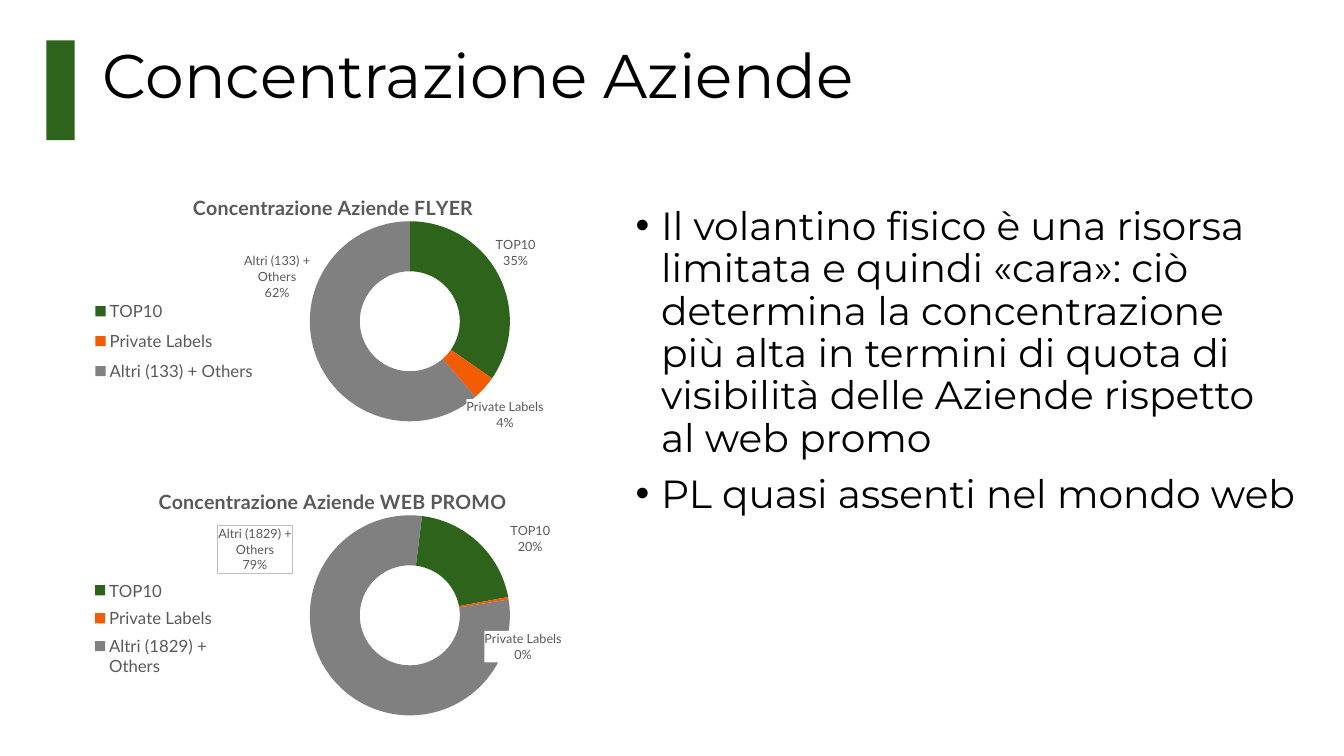
import pptx
import pptx.chart.data
import pptx.dml.color
import pptx.enum.chart
import pptx.enum.shapes
import pptx.oxml
import pptx.oxml.ns
import pptx.util

Cm, Pt = pptx.util.Cm, pptx.util.Pt
qn = pptx.oxml.ns.qn
COLORS = {"green": "2E631B", "orange": "F25C05", "grey": "808080", "text": "000000",
          "label": "595959", "border": "BFBFBF", "white": "FFFFFF"}
NS = pptx.oxml.ns.nsdecls("c", "a")
BULLETS = ["Il volantino fisico è una risorsa limitata e quindi «cara»: ciò determina la "
           "concentrazione più alta in termini di quota di visibilità delle Aziende rispetto "
           "al web promo",
           "PL quasi assenti nel mondo web"]
CHARTS = [
    dict(box=(2.03, 4.5, 12.7, 6.88), title="Concentrazione Aziende FLYER", title_x=21.6,
         cats=["TOP10", "Private Labels", "Altri (133) + Others"], vals=[35, 4, 62],
         offsets=[(7.8, -12.4), (7.8, 16), (-12.4, -26)],
         legend=(0.6, 41.3, 36, 36.5)),
    dict(box=(2.03, 11.91, 12.7, 6.88), title="Concentrazione Aziende WEB PROMO", title_x=14.8,
         cats=["TOP10", "Private Labels", "Altri (1829) + Others"], vals=[20, 0.4, 79],
         offsets=[(13.7, -8), (7.8, 16.2), (-20.4, -44)],
         legend=(1, 36.5, 27, 41), start=7, framed=2),
]


def rgb(name):
    """Return the named colour."""
    return pptx.dml.color.RGBColor.from_string(COLORS[name])


def set_font(font, size, color="label", name="Lato", bold=False):
    """Set the look of a font."""
    font.size, font.name, font.bold = Pt(size), name, bold
    font.color.rgb = rgb(color)


def add_text(tf, text, first=True, bullet=False, spacing=None, before=0, **font):
    """Write one paragraph into a text frame."""
    p = tf.paragraphs[0] if first else tf.add_paragraph()
    if bullet:
        pPr = p._p.get_or_add_pPr()
        pPr.set("marL", str(Cm(0.64)))
        pPr.set("indent", str(-Cm(0.64)))
        pPr.append(pptx.oxml.parse_xml(f'<a:buFont {NS} typeface="Arial"/>'))
        pPr.append(pptx.oxml.parse_xml(f'<a:buChar {NS} char="•"/>'))
    if spacing:
        p.line_spacing = spacing
        p.space_before = Pt(before)
    r = p.add_run()
    r.text = text
    set_font(r.font, **font)


def add_box(slide, box):
    """Add a wrapping text box and return its text frame."""
    tf = slide.shapes.add_textbox(*map(Cm, box)).text_frame
    tf.word_wrap = True
    return tf


def add_heading(slide, box, text):
    """Draw the green bar and the slide title."""
    x, y, w, h = box
    sp = slide.shapes.add_shape(pptx.enum.shapes.MSO_SHAPE.RECTANGLE,
                                Cm(x), Cm(y), Cm(0.71), Cm(2.51))
    sp.shadow.inherit = False
    sp.fill.solid()
    sp.fill.fore_color.rgb = rgb("green")
    sp.line.fill.background()
    tf = add_box(slide, (x + 1.17, y, w - 1.17, h))
    add_text(tf, text, spacing=0.9, size=44, color="text", name="Montserrat")


def add_bullets(slide, box, lines):
    """Draw the bulleted comments."""
    tf = add_box(slide, box)
    for i, line in enumerate(lines):
        add_text(tf, line, first=i == 0, bullet=True, spacing=0.9, before=10 if i else 0,
                 size=28, color="text", name="Montserrat")


def layout_xml(x, y, w=None, h=None, edge=True, inner=False):
    """Return a manual layout element from percentages of the chart."""
    parts = '<c:layoutTarget val="inner"/>' if inner else ""
    if edge:
        parts += '<c:xMode val="edge"/><c:yMode val="edge"/>'
    for tag, value in zip("xywh", (x, y, w, h)):
        if value is not None:
            parts += f'<c:{tag} val="{value / 100:.3f}"/>'
    return f"<c:layout {NS}><c:manualLayout>{parts}</c:manualLayout></c:layout>"


def set_layout(parent, xml, after=None):
    """Replace the layout of a chart part."""
    for old in parent.findall(qn("c:layout")):
        parent.remove(old)
    index = 0 if after is None else parent.index(parent.find(qn(after))) + 1
    parent.insert(index, pptx.oxml.parse_xml(xml))


def labels_xml(offsets, framed):
    """Return data labels that are moved from their slices."""
    show = "".join(f'<c:{tag} val="{val}"/>' for tag, val in [
        ("showLegendKey", 0), ("showVal", 1), ("showCatName", 1),
        ("showSerName", 0), ("showPercent", 0), ("showBubbleSize", 0)])
    show += "<c:separator>\n</c:separator>"
    text = ('<c:txPr><a:bodyPr wrap="square"/><a:p><a:pPr><a:defRPr sz="900" b="0"><a:solidFill>'
            f'<a:srgbClr val="{COLORS["label"]}"/></a:solidFill><a:latin typeface="Lato"/>'
            '</a:defRPr></a:pPr><a:endParaRPr lang="it-IT"/></a:p></c:txPr>')
    number = '<c:numFmt formatCode="0&quot;%&quot;" sourceLinked="0"/>'
    fill = f'<a:solidFill><a:srgbClr val="{COLORS["white"]}"/></a:solidFill>'
    border = f'<a:solidFill><a:srgbClr val="{COLORS["border"]}"/></a:solidFill>'
    items = ""
    for i, (dx, dy) in enumerate(offsets):
        line = border if i == framed else "<a:noFill/>"
        items += (f'<c:dLbl><c:idx val="{i}"/>{layout_xml(dx, dy, edge=False)}{number}'
                  f'<c:spPr>{fill}<a:ln w="{Pt(0.75)}">{line}</a:ln></c:spPr>{text}{show}</c:dLbl>')
    return f'<c:dLbls {NS}>{items}{number}{text}{show}<c:showLeaderLines val="0"/></c:dLbls>'


def add_doughnut(slide, box, title, title_x, cats, vals, offsets, legend, start=0, framed=None):
    """Draw one doughnut chart with its title, legend and labels."""
    data = pptx.chart.data.CategoryChartData(number_format="General")
    data.categories = cats
    data.add_series("Series 1", vals)
    chart = slide.shapes.add_chart(pptx.enum.chart.XL_CHART_TYPE.DOUGHNUT,
                                   *map(Cm, box), data).chart
    set_font(chart.font, 10, "text")
    chart.has_title = True
    add_text(chart.chart_title.text_frame, title, size=14, bold=True)
    chart.chart_title.include_in_layout = False
    set_layout(chart.chart_title._element, layout_xml(title_x, 4.2), "c:tx")

    chart.has_legend = True
    chart.legend.position = pptx.enum.chart.XL_LEGEND_POSITION.LEFT
    chart.legend.include_in_layout = False
    set_font(chart.legend.font, 12)
    set_layout(chart.legend._element, layout_xml(*legend), "c:legendPos")

    plot = chart.plots[0]
    plot.vary_by_categories = True
    ring = plot._element
    set_layout(ring.getparent(), layout_xml(45.5, 15.6, 39.7, 73.4, inner=True))
    ring.find(qn("c:firstSliceAng")).set("val", str(start))
    ring.find(qn("c:holeSize")).set("val", "65")
    series = plot.series[0]
    for i, color in enumerate(["green", "orange", "grey"]):
        fmt = series.points[i].format
        fmt.fill.solid()
        fmt.fill.fore_color.rgb = rgb(color)
        fmt.line.fill.background()
    labels = pptx.oxml.parse_xml(labels_xml(offsets, framed))
    series._element.find(qn("c:cat")).addprevious(labels)


def main():
    """Build and save the slide."""
    prs = pptx.Presentation()
    prs.slide_width, prs.slide_height = Cm(33.87), Cm(19.05)
    slide = prs.slides.add_slide(prs.slide_layouts[6])
    add_heading(slide, (1.17, 1.02, 30.38, 3.68), "Concentrazione Aziende")
    add_bullets(slide, (15.77, 5.08, 17.17, 12.09), BULLETS)
    for chart in CHARTS:
        add_doughnut(slide, **chart)
    prs.save("out.pptx")


if __name__ == "__main__":
    main()
